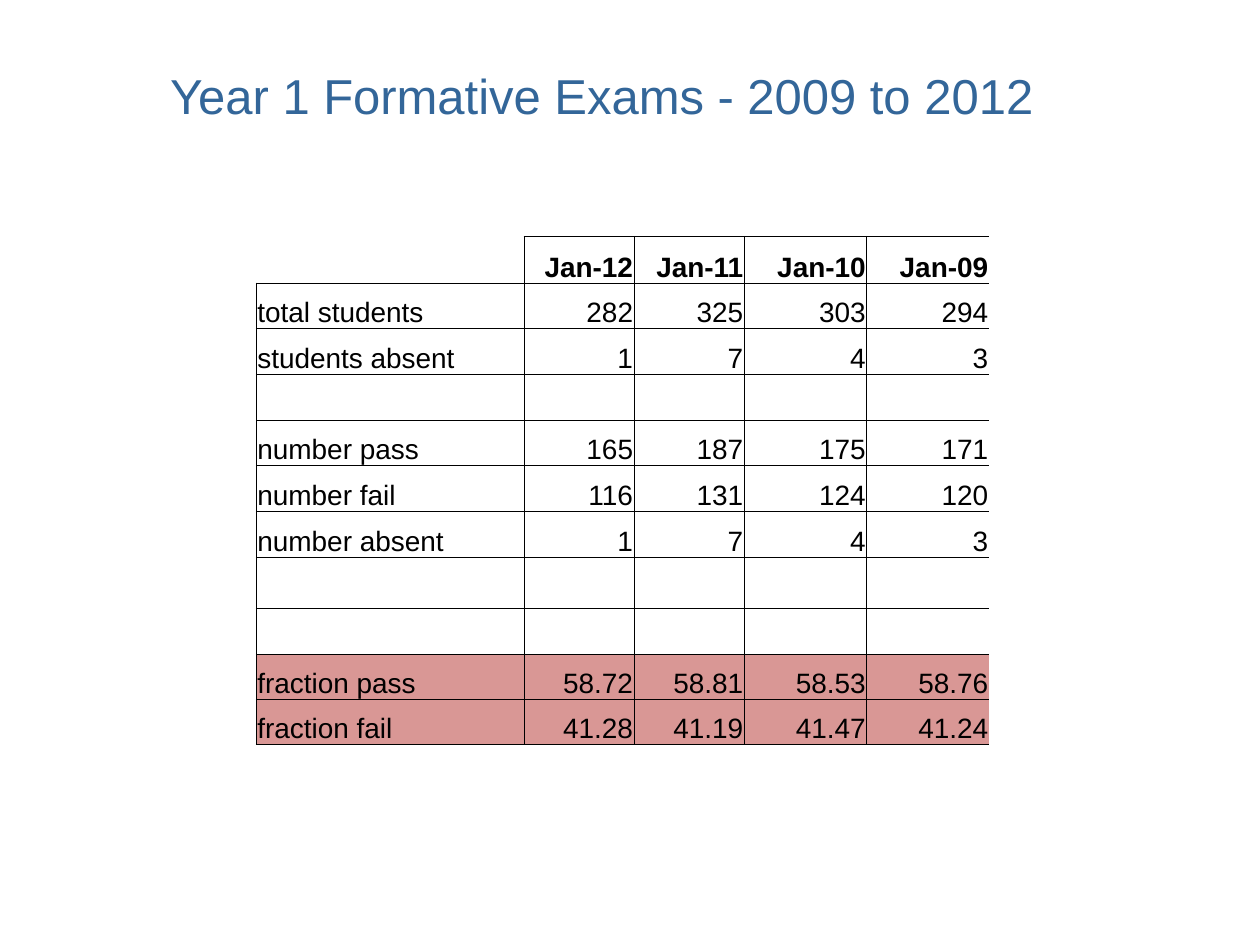
import lxml.etree
import pptx
import pptx.dml.color
import pptx.enum.text
import pptx.oxml.ns
import pptx.util

Pt = pptx.util.Pt
RGBColor = pptx.dml.color.RGBColor
ALIGN = pptx.enum.text.PP_ALIGN
ANCHOR = pptx.enum.text.MSO_ANCHOR

TITLE_BLUE = RGBColor(0x33, 0x66, 0x99)
BLACK = RGBColor(0x00, 0x00, 0x00)
ROSE = RGBColor(0xD9, 0x97, 0x95)

HEADER_ROW = 2
LAST_COLUMN = 4
COLUMN_WIDTHS = [153, 63, 63, 70, 70, 70, 70, 70]
ROW_HEIGHTS = [26.8] * 3 + [26.1] * 6 + [29.7] + [25.9] * 3
MERGES = [(0, 0, 0, 5)] + [(1, column, 12, column) for column in (5, 6, 7)]
EXAM_ROWS = [
    ["", "Jan-12", "Jan-11", "Jan-10", "Jan-09"],
    ["total students", "282", "325", "303", "294"],
    ["students absent", "1", "7", "4", "3"],
    [],
    ["number pass", "165", "187", "175", "171"],
    ["number fail", "116", "131", "124", "120"],
    ["number absent", "1", "7", "4", "3"],
    [],
    [],
    ["fraction pass", "58.72", "58.81", "58.53", "58.76"],
    ["fraction fail", "41.28", "41.19", "41.47", "41.24"],
]


def is_boxed(row, column):
    """Tell whether a cell belongs to the ruled part of the table."""
    if row == HEADER_ROW:
        return 1 <= column <= LAST_COLUMN
    return row > HEADER_ROW and 0 <= column <= LAST_COLUMN


class ExamPage:
    font_name = "Arial"
    title_size = 28
    cell_size = 16
    rule_width = 0.5

    def __init__(self, deck):
        self.page = deck.slides.add_slide(deck.slide_layouts[5])

    def style(self, para, size, color, bold=False):
        for span in para.runs:
            span.font.name = self.font_name
            span.font.size = Pt(size)
            span.font.bold = bold
            span.font.color.rgb = color

    def title(self, text, left, top, width, height):
        box = self.page.shapes.title
        box.left, box.top, box.width, box.height = map(Pt, (left, top, width, height))
        frame = box.text_frame
        frame.text = text
        frame.word_wrap = True
        frame.vertical_anchor = ANCHOR.TOP
        frame.paragraphs[0].alignment = ALIGN.LEFT
        self.style(frame.paragraphs[0], self.title_size, TITLE_BLUE)

    def borders(self, cell, row, column):
        neighbours = {
            "L": (row, column - 1),
            "R": (row, column + 1),
            "T": (row - 1, column),
            "B": (row + 1, column),
        }
        qn = pptx.oxml.ns.qn
        properties = cell._tc.get_or_add_tcPr()
        for index, (side, neighbour) in enumerate(neighbours.items()):
            line = lxml.etree.Element(qn("a:ln" + side), w=str(Pt(self.rule_width)))
            # The right side of the table stays open
            is_open = {column, neighbour[1]} == {LAST_COLUMN, LAST_COLUMN + 1}
            if not is_open and (is_boxed(row, column) or is_boxed(*neighbour)):
                fill = lxml.etree.SubElement(line, qn("a:solidFill"))
                lxml.etree.SubElement(fill, qn("a:srgbClr"), val=str(BLACK))
            else:
                lxml.etree.SubElement(line, qn("a:noFill"))
            properties.insert(index, line)

    def cell(self, cell, row, column, text):
        cell.margin_left = cell.margin_right = cell.margin_top = Pt(0.7)
        cell.margin_bottom = 0
        cell.vertical_anchor = ANCHOR.BOTTOM
        if text.startswith("fraction") or (column <= LAST_COLUMN and row >= 11):
            cell.fill.solid()
            cell.fill.fore_color.rgb = ROSE
        else:
            cell.fill.background()
        self.borders(cell, row, column)
        if text:
            para = cell.text_frame.paragraphs[0]
            para.text = text
            para.alignment = ALIGN.RIGHT if column else ALIGN.LEFT
            self.style(para, self.cell_size, BLACK, bold=row == HEADER_ROW)

    def table(self, rows, left, top):
        shape = self.page.shapes.add_table(
            len(ROW_HEIGHTS), len(COLUMN_WIDTHS), Pt(left), Pt(top),
            Pt(sum(COLUMN_WIDTHS)), Pt(sum(ROW_HEIGHTS)))
        table = shape.table
        table.first_row = table.horz_banding = False
        for column, width in zip(table.columns, COLUMN_WIDTHS):
            column.width = Pt(width)
        for row, height in zip(table.rows, ROW_HEIGHTS):
            row.height = Pt(height)
        for row in range(len(ROW_HEIGHTS)):
            values = rows[row - HEADER_ROW] if row >= HEADER_ROW else []
            for column in range(len(COLUMN_WIDTHS)):
                text = values[column] if column < len(values) else ""
                self.cell(table.cell(row, column), row, column, text)
        for top_row, left_column, bottom_row, right_column in MERGES:
            table.cell(top_row, left_column).merge(table.cell(bottom_row, right_column))


def main():
    deck = pptx.Presentation()
    deck.slide_width, deck.slide_height = Pt(720), Pt(540)
    exam_page = ExamPage(deck)

    # Title
    exam_page.title("Year 1 Formative Exams - 2009 to 2012", 90, 34, 604, 41)

    # Exam results, one column per sitting
    exam_page.table(EXAM_ROWS, 146.4, 81.4)

    deck.save("out.pptx")


if __name__ == "__main__":
    main()
